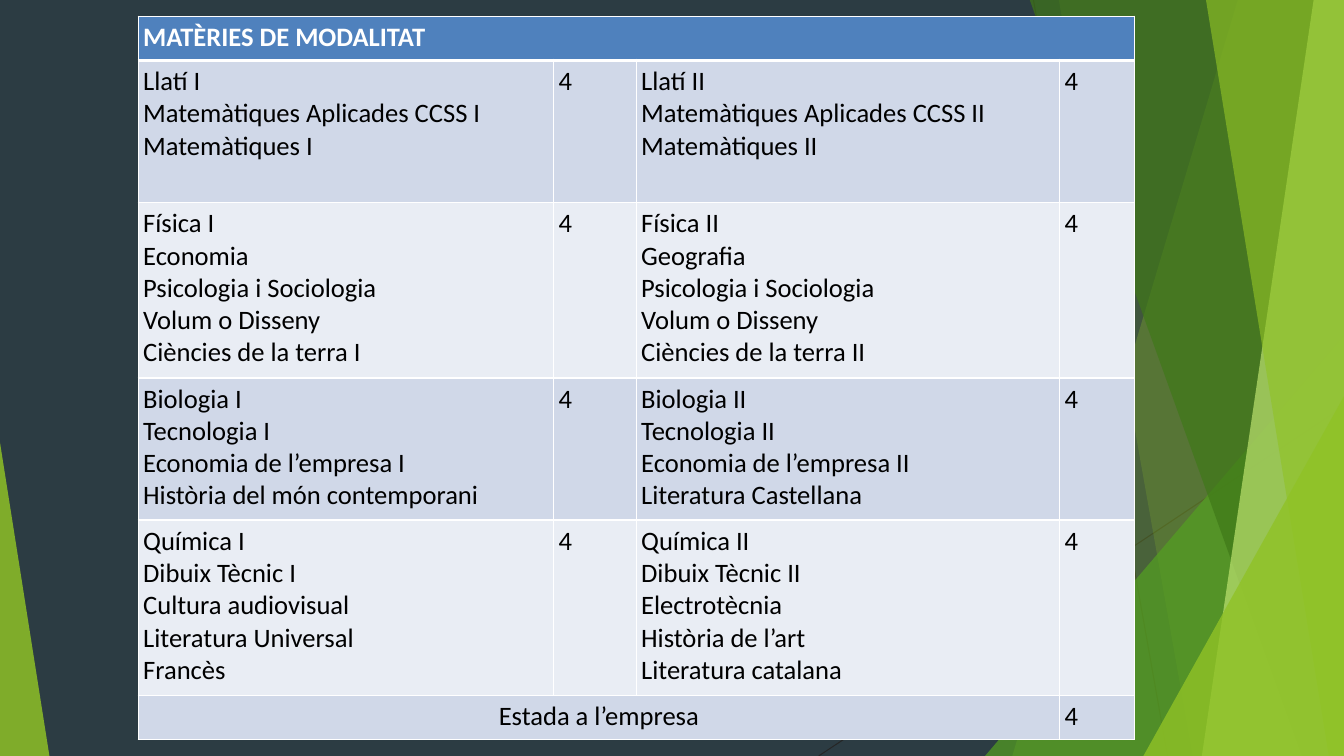
"""Builds a slide with a table of school subjects on a green faceted background."""
from lxml import etree
from pptx import Presentation, util as u
from pptx.dml.color import RGBColor
from pptx.enum import shapes, text
from pptx.oxml import ns

PX = 9144
W, H = 1333, 750


def rgb(c):
    return RGBColor.from_string(c)


def border(tc_pr, side, width):
    ln = etree.SubElement(tc_pr, ns.qn(f"a:ln{side}"), w=str(u.Pt(width)))
    fill = etree.SubElement(ln, ns.qn("a:solidFill"))
    etree.SubElement(fill, ns.qn("a:srgbClr"), val="FFFFFF")


prs = Presentation()
prs.slide_width, prs.slide_height = W * PX, H * PX
s = prs.slides.add_slide(prs.slide_layouts[6])
s.background.fill.solid()
s.background.fill.fore_color.rgb = rgb("2C3C43")

for line in [(1025, 0, 1158, H), (W, 403, 812, H)]:
    c = s.shapes.add_connector(shapes.MSO_CONNECTOR.STRAIGHT, *[v * PX for v in line])
    c.line.color.rgb = rgb("262626")
    c.line.width = u.Pt(0.75)
    etree.SubElement(c._element.spPr, ns.qn("a:effectLst"))

facets = [
    ("90C226", 29, [(1228, -1), (W, -1), (W, H), (1004, H)]),
    ("90C226", 20, [(1050, -1), (W, -1), (W, H), (1183, H)]),
    ("54A021", 71, [(977, H), (W, 333), (W, H)]),
    ("3F7818", 69, [(1021, -1), (W, -1), (W, H), (1291, H)]),
    ("BFE471", 69, [(1303, -1), (W, -1), (W, H), (1192, H)]),
    ("90C226", 64, [(1196, -1), (W, -1), (W, H), (1318, H)]),
    ("90C226", 80, [(1134, H), (W, 393), (W, H)]),
    ("90C226", 84, [(0, H), (0, 439), (49, H)]),
]
for color, alpha, points in facets:
    fb = s.shapes.build_freeform(*points[0], scale=PX)
    fb.add_line_segments(points[1:])
    sp = fb.convert_to_shape()
    sp.shadow.inherit = False
    sp.line.fill.background()
    sp.fill.solid()
    sp.fill.fore_color.rgb = rgb(color)
    clr = sp._element.spPr.find(".//" + ns.qn("a:srgbClr"))
    etree.SubElement(clr, ns.qn("a:alpha"), val=str(alpha * 1000))

rows = [
    (["MATÈRIES DE MODALITAT"], [], [], []),
    (["Llatí I", "Matemàtiques Aplicades CCSS I", "Matemàtiques I"], ["4"],
     ["Llatí II", "Matemàtiques Aplicades CCSS II", "Matemàtiques II"], ["4"]),
    (["Física I", "Economia", "Psicologia i Sociologia", "Volum o Disseny",
      "Ciències de la terra I"], ["4"],
     ["Física II", "Geografia", "Psicologia i Sociologia", "Volum o Disseny",
      "Ciències de la terra II"], ["4"]),
    (["Biologia I", "Tecnologia I", "Economia de l’empresa I",
      "Història del món contemporani"], ["4"],
     ["Biologia II", "Tecnologia II", "Economia de l’empresa II",
      "Literatura Castellana"], ["4"]),
    (["Química I", "Dibuix Tècnic I", "Cultura audiovisual", "Literatura Universal",
      "Francès"], ["4"],
     ["Química II", "Dibuix Tècnic II", "Electrotècnia", "Història de l’art",
      "Literatura catalana"], ["4"]),
    (["Estada a l’empresa"], [], [], ["4"]),
]
widths = [412, 82, 420, 74]
heights = [44, 141, 174, 141, 174, 44]
table = s.shapes.add_table(len(rows), len(widths), 137 * PX, 16 * PX,
                           sum(widths) * PX, sum(heights) * PX).table
for column, width in zip(table.columns, widths):
    column.width = width * PX
for i, (row, height) in enumerate(zip(rows, heights)):
    table.rows[i].height = height * PX
    header = i == 0
    for j, lines in enumerate(row):
        cell = table.cell(i, j)
        cell.margin_left = cell.margin_right = 5 * PX
        cell.margin_top = cell.margin_bottom = 5 * PX
        tc_pr = cell._tc.get_or_add_tcPr()
        for side, width in zip("LRTB", (1, 1, 3 if i == 1 else 1, 3 if header else 1)):
            border(tc_pr, side, width)
        cell.fill.solid()
        cell.fill.fore_color.rgb = rgb("4F81BD" if header else ["E9EDF4", "D0D8E8"][i % 2])
        tf = cell.text_frame
        for k, line in enumerate(lines):
            p = tf.add_paragraph() if k else tf.paragraphs[0]
            r = p.add_run()
            r.text = line
            r.font.name, r.font.size, r.font.bold = "Calibri", u.Pt(19), header
            r.font.color.rgb = rgb("FFFFFF" if header else "000000")
table.cell(0, 0).merge(table.cell(0, 3))
table.cell(5, 0).merge(table.cell(5, 2))
table.cell(5, 0).text_frame.paragraphs[0].alignment = text.PP_ALIGN.CENTER

prs.save("out.pptx")
